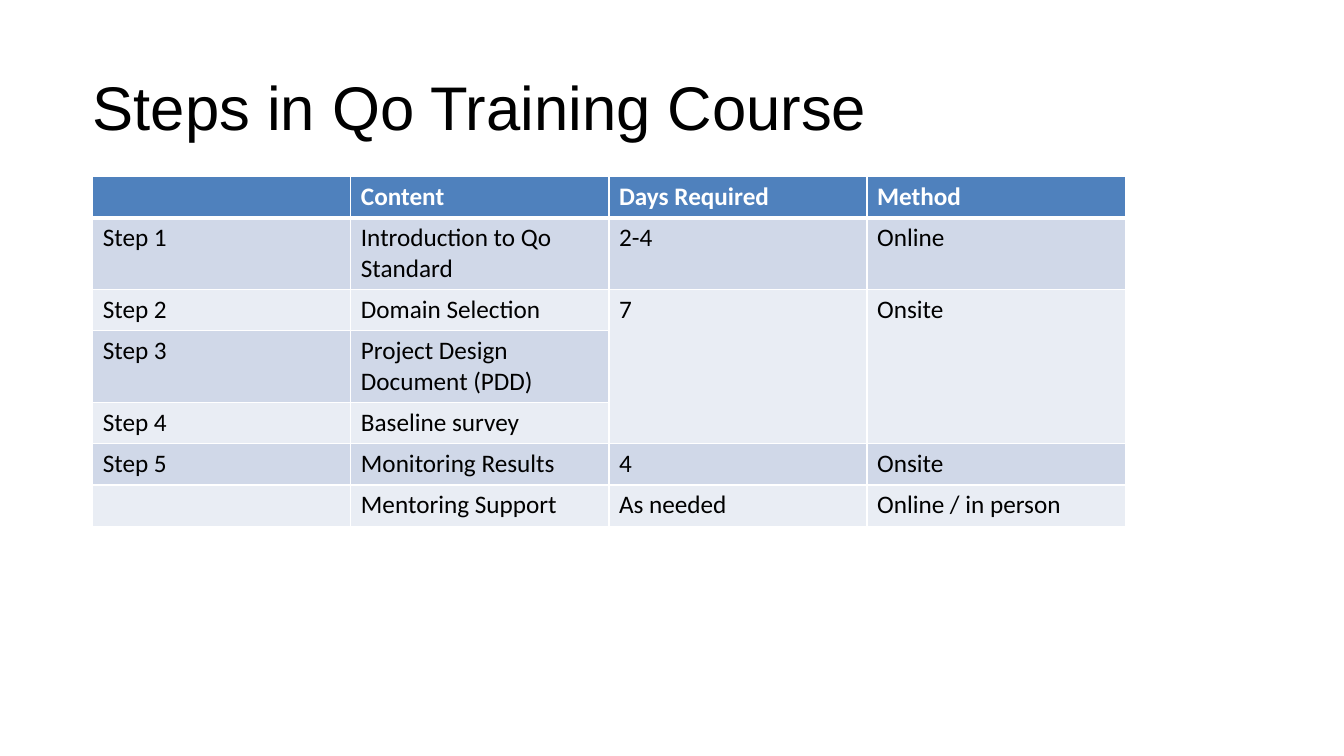
import dataclasses

import lxml.etree
import pptx
import pptx.dml.color
import pptx.enum.text
import pptx.oxml.ns
import pptx.util

Inches = pptx.util.Inches
Pt = pptx.util.Pt


@dataclasses.dataclass(frozen=True)
class Theme:
    title_font: str = "Arial"
    body_font: str = "Calibri"
    title_size: int = 44
    body_size: int = 18
    ink: str = "000000"
    paper: str = "FFFFFF"
    header: str = "4F81BD"
    bands: tuple = ("D0D8E8", "E9EDF4")
    rule: float = 1
    header_rule: float = 3


THEME = Theme()
LEFT = 0.92
COLUMN_WIDTH = 2.56
ROW_HEIGHT = 0.41

STEPS = [
    ("", "Content", "Days Required", "Method"),
    ("Step 1", "Introduction to Qo Standard", "2-4", "Online"),
    ("Step 2", "Domain Selection", "7", "Onsite"),
    ("Step 3", "Project Design Document (PDD)", "", ""),
    ("Step 4", "Baseline survey", "", ""),
    ("Step 5", "Monitoring Results", "4", "Onsite"),
    ("", "Mentoring Support", "As needed", "Online / in person"),
]
ONSITE_ROWS = (2, 4)
SHARED_COLUMNS = (2, 3)


def color(value):
    return pptx.dml.color.RGBColor.from_string(value)


def style_font(font, name, size, ink, bold=False):
    font.name = name
    font.size = Pt(size)
    font.bold = bold
    font.color.rgb = color(ink)


def add_title(page, text):
    title = page.shapes.title
    title.left, title.top = Inches(LEFT), Inches(0.67)
    title.width, title.height = Inches(11.5), Inches(0.76)
    frame = title.text_frame
    frame.margin_left = frame.margin_right = 0
    frame.margin_top = frame.margin_bottom = 0
    frame.vertical_anchor = pptx.enum.text.MSO_ANCHOR.MIDDLE
    frame.text = text
    para = frame.paragraphs[0]
    para.alignment = pptx.enum.text.PP_ALIGN.LEFT
    style_font(para.font, THEME.title_font, THEME.title_size, THEME.ink)


def set_borders(cell, top, bottom):
    """Rule all four sides; top and bottom are widths in points."""
    qn = pptx.oxml.ns.qn
    properties = cell._tc.get_or_add_tcPr()
    widths = {"L": THEME.rule, "R": THEME.rule, "T": top, "B": bottom}
    for side, width in widths.items():
        line = lxml.etree.SubElement(properties, qn(f"a:ln{side}"), w=str(Pt(width)))
        fill = lxml.etree.SubElement(line, qn("a:solidFill"))
        lxml.etree.SubElement(fill, qn("a:srgbClr"), val=THEME.paper)


def format_cell(cell, text, row):
    is_header = row == 0
    set_borders(
        cell,
        top=THEME.header_rule if row == 1 else THEME.rule,
        bottom=THEME.header_rule if is_header else THEME.rule,
    )
    cell.fill.solid()
    band = THEME.bands[(row - 1) % len(THEME.bands)]
    cell.fill.fore_color.rgb = color(THEME.header if is_header else band)
    cell.text = text
    ink = THEME.paper if is_header else THEME.ink
    style_font(cell.text_frame.paragraphs[0].font, THEME.body_font,
               THEME.body_size, ink, is_header)


def add_steps_table(page, steps):
    row_count, column_count = len(steps), len(steps[0])
    table = page.shapes.add_table(
        row_count, column_count, Inches(LEFT), Inches(1.75),
        Inches(COLUMN_WIDTH * column_count), Inches(ROW_HEIGHT * row_count),
    ).table
    for row, texts in enumerate(steps):
        for column, text in enumerate(texts):
            format_cell(table.cell(row, column), text, row)
    first, last = ONSITE_ROWS
    for column in SHARED_COLUMNS:
        table.cell(first, column).merge(table.cell(last, column))


def main():
    deck = pptx.Presentation()
    deck.slide_width, deck.slide_height = Inches(13.33), Inches(7.5)
    page = deck.slides.add_slide(deck.slide_layouts.get_by_name("Title Only"))
    add_title(page, "Steps in Qo Training Course")
    add_steps_table(page, STEPS)
    deck.save("out.pptx")


if __name__ == "__main__":
    main()
